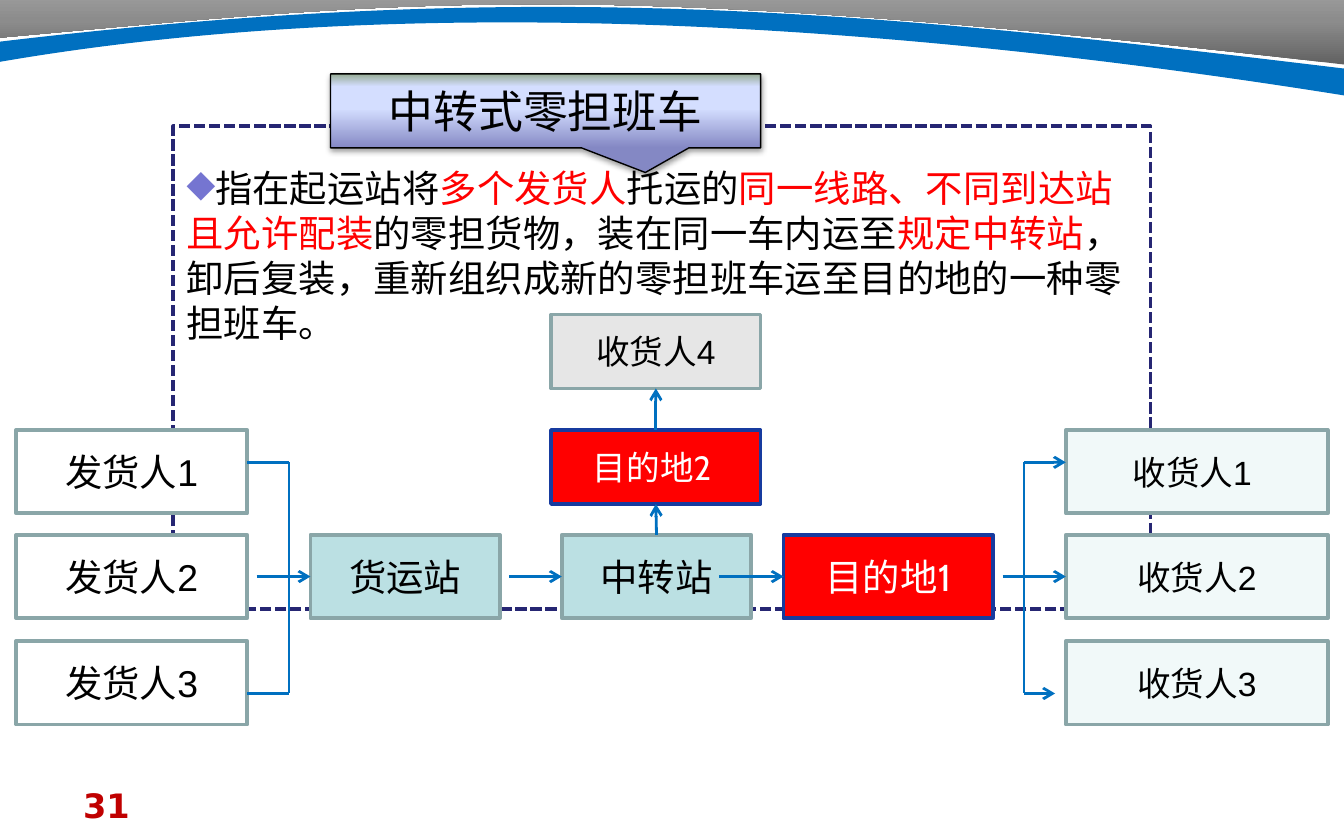
from lxml.etree import SubElement
from pptx import Presentation
from pptx.dml.color import RGBColor
from pptx.enum.dml import MSO_LINE
from pptx.enum.shapes import MSO_CONNECTOR, MSO_SHAPE
from pptx.enum.text import MSO_ANCHOR, PP_ALIGN
from pptx.oxml.ns import qn
from pptx.util import Inches, Pt

COLORS = {
    "black": "000000", "white": "FFFFFF", "red": "FF0000", "number": "C00000",
    "blue": "0070C0", "navy": "262673", "bullet": "7575D1", "outline": "8AA6A8",
    "target_line": "173B9F", "receiver": "F1F9F9", "station": "BBE0E3", "gray": "E6E6E6",
}
RGB = {name: RGBColor.from_string(value) for name, value in COLORS.items()}


def set_gradient(shape, stops):
    shape.fill.gradient()
    shape.fill.gradient_angle = 90
    stop_list = shape._element.spPr.find(qn("a:gradFill")).find(qn("a:gsLst"))
    for old_stop in list(stop_list):
        stop_list.remove(old_stop)
    for position, color in stops:
        stop = SubElement(stop_list, qn("a:gs"), pos=str(position * 1000))
        SubElement(stop, qn("a:srgbClr"), val=color)


def add_band(shapes, points, curve_starts):
    corners = [(Inches(x), Inches(y)) for x, y in points]
    builder = shapes.build_freeform(*corners[0])
    builder.add_line_segments(corners[1:], close=True)
    band = builder.convert_to_shape()
    outline = next(band._element.iter(qn("a:path")))
    segments = list(outline)
    for start in curve_starts:
        curve = outline.makeelement(qn("a:cubicBezTo"))
        segments[start].addprevious(curve)
        for segment in segments[start:start + 3]:
            curve.append(segment[0])
            outline.remove(segment)
    band.shadow.inherit = False
    band.line.fill.background()
    return band


presentation = Presentation()
presentation.slide_width = Inches(10)
presentation.slide_height = Inches(6.25)
slide = presentation.slides.add_slide(presentation.slide_layouts[6])
shapes = slide.shapes

number_box = shapes.add_textbox(Inches(0.52), Inches(5.79), Inches(2.33), Inches(0.33))
number_box.text_frame.word_wrap = True
number_box.text_frame.text = "31"
number_font = number_box.text_frame.paragraphs[0].runs[0].font
number_font.name, number_font.size, number_font.bold = "DejaVu Sans", Pt(18), True
number_font.color.rgb = RGB["number"]

gray_band = add_band(shapes, [
    (10, 0.48), (4.43, -0.17), (3.08, 0), (0, 0.28), (0, 0.19), (0, -0.02), (10, -0.02),
], [1])
set_gradient(gray_band, [(0, "626262"), (50, "8C8C8C"), (100, "A6A6A6")])
blue_band = add_band(shapes, [
    (0, 0.31), (4.03, -0.17), (6.52, 0.09), (10, 0.51),
    (10, 0.71), (6.05, 0.08), (2.67, 0), (0, 0.46),
], [1, 5])
blue_band.fill.solid()
blue_band.fill.fore_color.rgb = RGB["blue"]

frame = shapes.add_shape(MSO_SHAPE.RECTANGLE, Inches(1.29), Inches(0.94), Inches(7.27), Inches(3.59))
frame.shadow.inherit = False
frame.fill.background()
frame.line.color.rgb = RGB["navy"]
frame.line.width = Pt(2)
frame.line.dash_style = MSO_LINE.SQUARE_DOT
text_frame = frame.text_frame
text_frame.word_wrap = True
text_frame.vertical_anchor = MSO_ANCHOR.TOP
text_frame.margin_top = Inches(0.29)
paragraph = text_frame.paragraphs[0]
paragraph.alignment = PP_ALIGN.LEFT
paragraph.line_spacing = Pt(24)
properties = paragraph._p.get_or_add_pPr()
properties.set("marL", "0")
properties.set("indent", "0")
SubElement(SubElement(properties, qn("a:buClr")), qn("a:srgbClr"), val=COLORS["bullet"])
SubElement(properties, qn("a:buFont"), typeface="OpenSymbol")
SubElement(properties, qn("a:buChar"), char="◆")
for text, color in [
    ("指在起运站将", "black"),
    ("多个发货人", "red"),
    ("托运的", "black"),
    ("同一线路、不同到达站且允许配装", "red"),
    ("的零担货物，装在同一车内运至", "black"),
    ("规定中转站", "red"),
    ("，卸后复装，重新组织成新的零担班车运至目的地的一种零担班车。", "black"),
]:
    run = paragraph.add_run()
    run.text = text
    run.font.name, run.font.size = "Arial", Pt(20)
    run.font.color.rgb = RGB[color]

title = shapes.add_shape(MSO_SHAPE.RECTANGULAR_CALLOUT, Inches(2.46), Inches(0.55), Inches(3.2), Inches(0.55))
title.adjustments[0], title.adjustments[1] = 0.232, 0.834
set_gradient(title, [(0, "8488C4"), (53, "D4DEFF"), (83, "D4DEFF"), (100, "96AB94")])
title.line.color.rgb = RGB["black"]
title.line.width = Pt(0.75)
title.shadow.inherit = False
shadow = SubElement(title._element.spPr.find(qn("a:effectLst")), qn("a:outerShdw"),
                    blurRad=str(Pt(3.1)), dist=str(Pt(1.6)), dir="5400000", rotWithShape="0")
shadow_color = SubElement(shadow, qn("a:srgbClr"), val=COLORS["black"])
SubElement(shadow_color, qn("a:alpha"), val="38000")
title.text_frame.vertical_anchor = MSO_ANCHOR.MIDDLE
title.text_frame.text = "中转式零担班车"
title.text_frame.paragraphs[0].alignment = PP_ALIGN.CENTER
title_font = title.text_frame.paragraphs[0].runs[0].font
title_font.name, title_font.size = "Noto Sans CJK SC", Pt(24)
title_font.color.rgb = RGB["black"]
SubElement(title_font._element, qn("a:ea"), typeface="Noto Sans CJK SC")

row_tops = (3.2, 3.98, 4.77)
box_data = []
for index, top in enumerate(row_tops, 1):
    box_data.append((f"发货人{index}", 0.12, top, 1.72, 0.62, "white", 20))
    receiver = "收货人1 " if index == 1 else f"收货人{index}"
    box_data.append((receiver, 7.93, top, 1.95, 0.62, "receiver", 18))
box_data += [
    ("货运站", 2.31, 3.98, 1.41, 0.62, "station", 20),
    ("中转站", 4.18, 3.98, 1.41, 0.62, "station", 20),
    ("目的地1", 5.83, 3.98, 1.56, 0.62, "red", 20),
    ("目的地2 ", 4.1, 3.2, 1.56, 0.55, "red", 18),
    ("收货人4", 4.1, 2.34, 1.56, 0.55, "gray", 18),
]
boxes = {}
for text, left, top, width, height, fill, size in box_data:
    box = shapes.add_shape(MSO_SHAPE.RECTANGLE, Inches(left), Inches(top), Inches(width), Inches(height))
    box.shadow.inherit = False
    box.fill.solid()
    box.fill.fore_color.rgb = RGB[fill]
    is_target = fill == "red"
    box.line.color.rgb = RGB["target_line" if is_target else "outline"]
    box.line.width = Pt(2)
    box.text_frame.vertical_anchor = MSO_ANCHOR.MIDDLE
    box.text_frame.text = text
    box.text_frame.paragraphs[0].alignment = PP_ALIGN.CENTER
    font = box.text_frame.paragraphs[0].runs[0].font
    font.name, font.size = "Cabin" if is_target else "Arial", Pt(size)
    font.color.rgb = RGB["white" if is_target else "black"]
    boxes[text.strip()] = box

for x1, y1, x2, y2, arrow, begin, end in [
    (1.91, 4.3, 2.31, 4.3, True, None, ("货运站", 1)),
    (3.79, 4.3, 4.18, 4.3, True, None, ("中转站", 1)),
    (5.35, 4.3, 5.83, 4.3, True, None, ("目的地1", 1)),
    (7.46, 4.3, 7.93, 4.3, True, None, ("收货人2", 1)),
    (2.15, 3.44, 2.15, 5.16, False, None, None),
    (1.84, 3.44, 2.15, 3.44, False, None, None),
    (1.84, 5.16, 2.15, 5.16, False, None, None),
    (7.62, 3.44, 7.62, 5.16, False, None, None),
    (7.62, 3.44, 7.93, 3.44, True, None, None),
    (7.62, 5.16, 7.85, 5.16, True, None, None),
    (4.88, 3.98, 4.88, 3.75, True, ("中转站", 0), ("目的地2", 2)),
    (4.88, 3.2, 4.88, 2.89, True, ("目的地2", 0), ("收货人4", 2)),
]:
    connector = shapes.add_connector(MSO_CONNECTOR.STRAIGHT, Inches(x1), Inches(y1), Inches(x2), Inches(y2))
    if begin:
        connector.begin_connect(boxes[begin[0]], begin[1])
    if end:
        connector.end_connect(boxes[end[0]], end[1])
        if not begin:
            connector.begin_y = connector.end_y
    connector.line.color.rgb = RGB["blue"]
    connector.line.width = Pt(1.5)
    if arrow:
        SubElement(connector.line._get_or_add_ln(), qn("a:tailEnd"), type="arrow")
    SubElement(connector._element.spPr, qn("a:effectLst"))

presentation.save("out.pptx")
